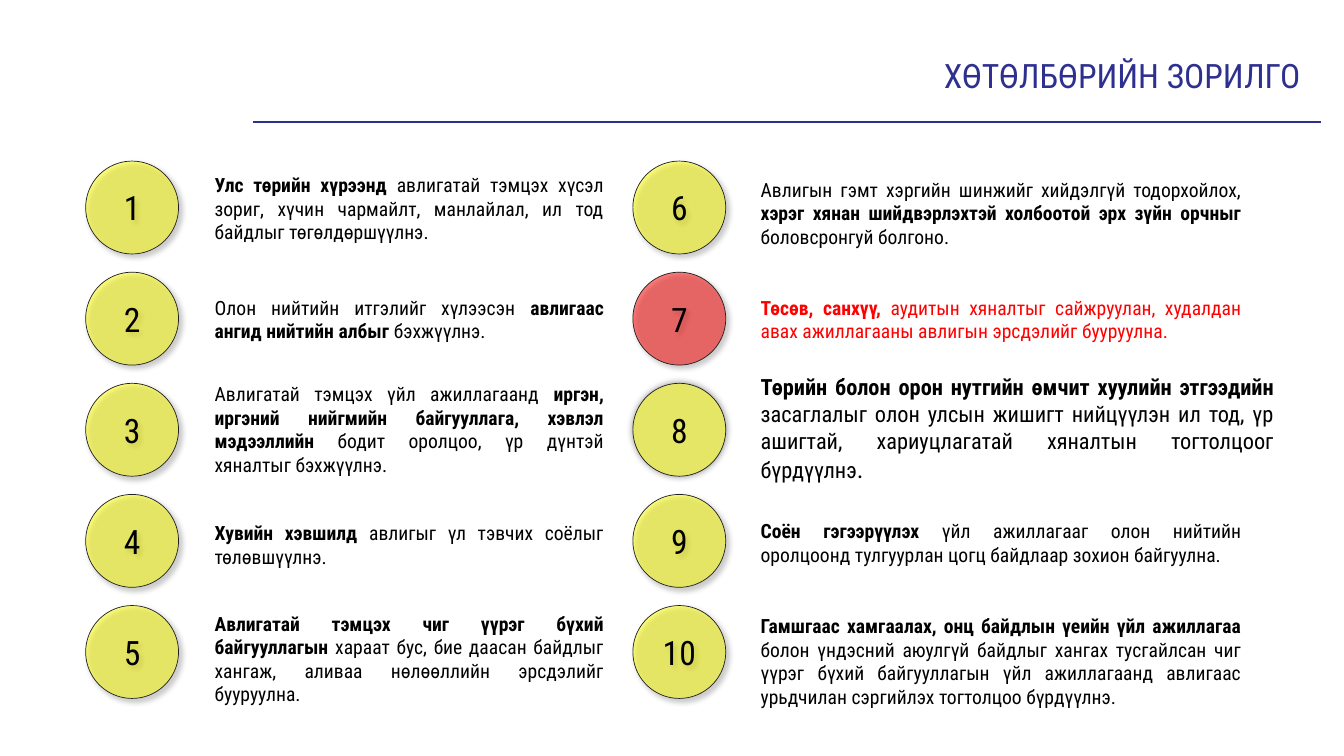
from lxml.etree import SubElement
from pptx import Presentation
from pptx.dml.color import RGBColor
from pptx.enum.shapes import MSO_CONNECTOR, MSO_SHAPE
from pptx.enum.text import MSO_ANCHOR, MSO_AUTO_SIZE, PP_ALIGN
from pptx.oxml.ns import qn
from pptx.util import Cm, Pt

FONT = "Roboto Condensed"
BLACK, RED, NAVY, EDGE = "000000", "FF0000", "2E308F", "202020"
YELLOW, OLIVE = "FFFF00", "E5E566"


def color(value):
    return RGBColor.from_string(value)


class GoalPage:
    """Holds the font and the current slide, and draws its elements."""

    def __init__(self, page, font):
        self.page = page
        self.font = font

    def style(self, para, size, ink, align):
        para.alignment = align
        para.font.name = self.font
        para.font.size = Pt(size)
        para.font.color.rgb = color(ink)

    def text(self, left, top, width, height, content, size, ink=BLACK,
             align=PP_ALIGN.JUSTIFY, grow=True):
        """Write text; parts between ** marks are bold."""
        box = self.page.shapes.add_textbox(Cm(left), Cm(top), Cm(width), Cm(height))
        frame = box.text_frame
        frame.word_wrap = True
        frame.vertical_anchor = MSO_ANCHOR.MIDDLE
        frame.auto_size = MSO_AUTO_SIZE.SHAPE_TO_FIT_TEXT if grow else MSO_AUTO_SIZE.NONE
        para = frame.paragraphs[0]
        self.style(para, size, ink, align)
        for index, part in enumerate(content.split("**")):
            if part:
                span = para.add_run()
                span.text = part
                span.font.bold = index % 2 == 1
        return para

    def circle(self, left, top, size, label, fill, opacity, blur, distance, angle):
        disc = self.page.shapes.add_shape(
            MSO_SHAPE.OVAL, Cm(left), Cm(top), Cm(size), Cm(size))
        disc.fill.solid()
        disc.fill.fore_color.rgb = color(fill)
        properties = disc.element.spPr
        if opacity < 100:
            tint = properties.find(qn("a:solidFill")).find(qn("a:srgbClr"))
            SubElement(tint, qn("a:alpha"), val=str(opacity * 1000))
        disc.line.color.rgb = color(EDGE)
        disc.line.width = Pt(0.5)

        # Soft shadow
        disc.shadow.inherit = False
        shadow = SubElement(
            properties.find(qn("a:effectLst")), qn("a:outerShdw"),
            blurRad=str(Pt(blur)), dist=str(Pt(distance)),
            dir=str(angle * 60000), algn="ctr", rotWithShape="0")
        shade = SubElement(shadow, qn("a:srgbClr"), val=BLACK)
        SubElement(shade, qn("a:alpha"), val="40000")

        frame = disc.text_frame
        frame.vertical_anchor = MSO_ANCHOR.MIDDLE
        frame.paragraphs[0].text = label
        self.style(frame.paragraphs[0], 24, BLACK, PP_ALIGN.CENTER)

    def rule(self, left, right, top, ink, width):
        line = self.page.shapes.add_connector(
            MSO_CONNECTOR.STRAIGHT, Cm(left), Cm(top), Cm(right), Cm(top))
        line.line.color.rgb = color(ink)
        line.line.width = Pt(width)
        SubElement(line.element.spPr, qn("a:effectLst"))


# Goals: text top, text height, wording
LEFT_GOALS = [
    (4.22, 2.06, "**Улс төрийн хүрээнд **авлигатай тэмцэх хүсэл зориг, хүчин чармайлт, "
                 "манлайлал, ил тод байдлыг төгөлдөршүүлнэ."),
    (7.32, 1.45, "Олон нийтийн итгэлийг хүлээсэн **авлигаас ангид нийтийн албыг **бэхжүүлнэ."),
    (9.78, 2.06, "Авлигатай тэмцэх үйл ажиллагаанд **иргэн, иргэний нийгмийн байгууллага, "
                 "хэвлэл мэдээллийн** бодит оролцоо, үр дүнтэй хяналтыг бэхжүүлнэ."),
    (13.0, 1.45, "**Хувийн хэвшилд **авлигыг үл тэвчих соёлыг төлөвшүүлнэ."),
    (15.57, 2.06, "**Авлигатай тэмцэх чиг үүрэг бүхий байгууллагын **хараат бус, бие даасан "
                  "байдлыг хангаж, аливаа нөлөөллийн эрсдэлийг бууруулна."),
]
RIGHT_GOALS = [
    (4.34, 2.06, "Авлигын гэмт хэргийн шинжийг хийдэлгүй тодорхойлох, **хэрэг хянан "
                 "шийдвэрлэхтэй холбоотой эрх зүйн орчныг **боловсронгуй болгоно."),
    (7.32, 1.45, "**Төсөв, санхүү, **аудитын хяналтыг сайжруулан, худалдан авах "
                 "ажиллагааны авлигын эрсдэлийг бууруулна."),
    (9.6, 2.39, "**Төрийн болон орон нутгийн өмчит хуулийн этгээдийн** засаглалыг олон улсын "
                "жишигт нийцүүлэн ил тод, үр ашигтай, хариуцлагатай хяналтын тогтолцоог "
                "бүрдүүлнэ"),
    (12.95, 1.45, "**Соён гэгээрүүлэх **үйл ажиллагааг олон нийтийн оролцоонд тулгуурлан "
                  "цогц байдлаар зохион байгуулна."),
    (15.34, 2.64, "**Гамшгаас хамгаалах, онц байдлын үеийн үйл ажиллагаа **болон үндэсний "
                  "аюулгүй байдлыг хангах тусгайлсан чиг үүрэг бүхий байгууллагын үйл "
                  "ажиллагаанд авлигаас урьдчилан сэргийлэх тогтолцоо бүрдүүлнэ."),
]
# Columns: circle left, text left, text width, goals
COLUMNS = [(2.16, 5.16, 10.31, LEFT_GOALS), (15.95, 18.92, 12.62, RIGHT_GOALS)]
FIRST_TOP, PITCH, DIAMETER = 4.06, 2.8, 2.34
URGENT, FEATURED = 7, 8


def main():
    deck = Presentation()
    deck.slide_width, deck.slide_height = Cm(33.87), Cm(19.05)
    goals_page = GoalPage(deck.slides.add_slide(deck.slide_layouts[6]), FONT)

    # Numbered goals
    number = 0
    for circle_left, text_left, text_width, goals in COLUMNS:
        for row, (top, height, wording) in enumerate(goals):
            number += 1
            featured, urgent = number == FEATURED, number == URGENT
            fill, opacity = (OLIVE, 100) if featured else (RED if urgent else YELLOW, 50)
            blur, distance, angle = (5, 0, 0) if featured else (4, 3, 45)
            goals_page.circle(circle_left, FIRST_TOP + row * PITCH, DIAMETER, str(number),
                              fill, opacity, blur, distance, angle)
            para = goals_page.text(text_left, top, 13.44 if featured else text_width, height,
                                   wording, 16 if featured else 14, RED if urgent else BLACK)
            if featured:
                stop = para.add_run()
                stop.text = "."
                stop.font.size = Pt(18)

    # Title and rule
    goals_page.text(10.74, 1.3, 22.28, 1.17, "ХӨТӨЛБӨРИЙН ЗОРИЛГО", 24, NAVY,
                    PP_ALIGN.RIGHT, grow=False)
    goals_page.rule(6.38, 33.3, 3.07, NAVY, 1.5)

    deck.save("out.pptx")


if __name__ == "__main__":
    main()
